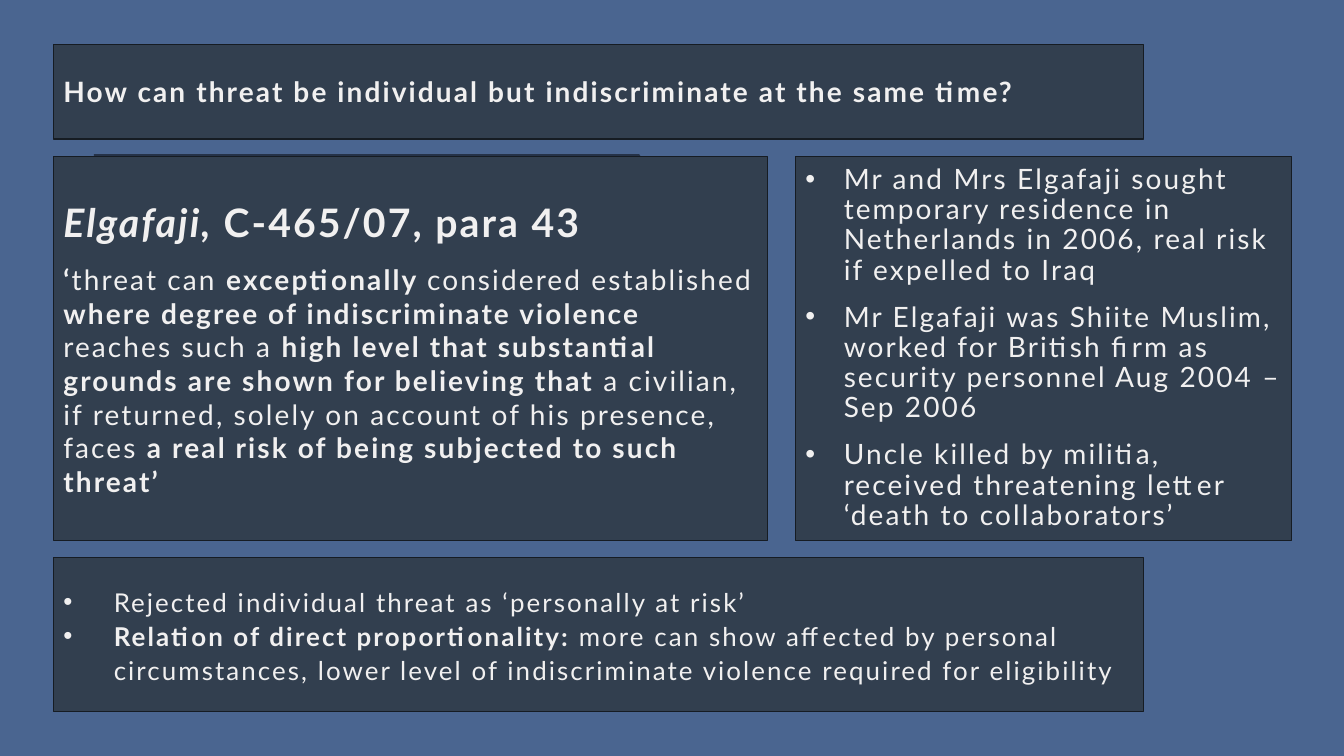
import pptx
import pptx.dml.color
import pptx.enum.shapes
import pptx.enum.text
import pptx.util
from lxml import etree
from pptx.util import Inches

RGBColor = pptx.dml.color.RGBColor
BACKGROUND = RGBColor(0x4A, 0x65, 0x90)
BACKDROP = RGBColor(0x25, 0x32, 0x48)
PANEL = RGBColor(0x32, 0x3F, 0x4F)
BORDER = RGBColor(0x16, 0x1C, 0x23)
TEXT = RGBColor(0xF1, 0xF0, 0xF0)

LEFT = 0.53
WIDE = 10.81
MIDDLE_TOP, MIDDLE_HEIGHT = 1.55, 3.81


def add_backdrop(slide):
    """Cut-corner outline behind the quotation panel."""
    points = [(6.34, 1.53), (7.08, 2.59), (7.08, 4.68), (0.93, 4.68)]
    builder = slide.shapes.build_freeform(Inches(0.93), Inches(1.53))
    builder.add_line_segments([(Inches(x), Inches(y)) for x, y in points], close=True)
    sp = builder.convert_to_shape()
    sp.shadow.inherit = False
    sp.fill.solid()
    sp.fill.fore_color.rgb = BACKDROP
    sp.line.fill.background()


def add_panel(slide, left, top, width, height):
    """Bordered dark rectangle; returns its text frame."""
    sp = slide.shapes.add_shape(
        pptx.enum.shapes.MSO_SHAPE.RECTANGLE,
        Inches(left), Inches(top), Inches(width), Inches(height))
    sp.shadow.inherit = False
    sp.fill.solid()
    sp.fill.fore_color.rgb = PANEL
    sp.line.color.rgb = BORDER
    sp.line.width = pptx.util.Pt(1)
    tf = sp.text_frame
    tf.word_wrap = True
    tf.vertical_anchor = pptx.enum.text.MSO_ANCHOR.MIDDLE
    return tf


def add_paragraph(tf, runs, size, before=0, line_spacing=1.0, indent=0):
    """Add (text, style) runs, style holding b and i; an indent adds a bullet."""
    p = tf.paragraphs[0]
    if p.runs:
        p = tf.add_paragraph()
    p.alignment = pptx.enum.text.PP_ALIGN.LEFT
    p.space_before = pptx.util.Pt(before)
    p.line_spacing = line_spacing
    p.font.name = "Lato"
    p.font.size = pptx.util.Pt(size)
    p.font.color.rgb = TEXT
    if indent:
        add_bullet(p, indent)
    for text, style in runs:
        r = p.add_run()
        r.text = text
        r.font.bold = "b" in style
        r.font.italic = "i" in style
        r.font._element.set("spc", "150")


def add_bullet(p, indent):
    pPr = p._p.get_or_add_pPr()
    pPr.set("marL", str(Inches(indent)))
    pPr.set("indent", str(-Inches(indent)))
    ns = pptx.oxml.ns.qn
    bullet_font = etree.Element(ns("a:buFont"), typeface="Arial")
    bullet = etree.Element(ns("a:buChar"), char="•")
    defaults = pPr.find(ns("a:defRPr"))
    defaults.addprevious(bullet_font)
    defaults.addprevious(bullet)


def main():
    prs = pptx.Presentation()
    prs.slide_width, prs.slide_height = Inches(13.33), Inches(7.5)
    slide = prs.slides.add_slide(prs.slide_layouts[6])
    slide.background.fill.solid()
    slide.background.fill.fore_color.rgb = BACKGROUND
    add_backdrop(slide)

    # Quotation from the judgment
    tf = add_panel(slide, LEFT, MIDDLE_TOP, 7.08, MIDDLE_HEIGHT)
    add_paragraph(tf, [("Elgafaji, ", "bi"), ("C-465/07, para 43", "b")], 28, before=12)
    add_paragraph(tf, [
        ("‘", "b"),
        ("threat can ", ""),
        ("exceptionally ", "b"),
        ("considered established ", ""),
        ("where degree of indiscriminate violence ", "b"),
        ("reaches such a ", ""),
        ("high level that substantial grounds are shown for believing that ", "b"),
        ("a civilian, if returned, solely on account of his presence, faces ", ""),
        ("a real risk of being subjected to such threat’", "b"),
    ], 20, before=12)

    # Title
    tf = add_panel(slide, LEFT, 0.44, WIDE, 0.94)
    add_paragraph(tf, [
        ("How can threat be individual but indiscriminate at the same time?", "b")], 20)

    # Conclusion
    tf = add_panel(slide, LEFT, 5.53, WIDE, 1.53)
    for runs in (
        [("Rejected individual threat as ‘personally at risk’", "")],
        [("Relation of direct proportionality: ", "b"),
         ("more can show affected by personal circumstances, lower level of "
          "indiscriminate violence required for eligibility", "")],
    ):
        add_paragraph(tf, runs, 18.5, line_spacing=1.1, indent=0.5)

    # Facts of the case
    tf = add_panel(slide, 7.89, MIDDLE_TOP, 4.92, MIDDLE_HEIGHT)
    for fact in (
        "Mr and Mrs Elgafaji sought temporary residence in Netherlands in 2006, "
        "real risk if expelled to Iraq",
        "Mr Elgafaji was Shiite Muslim, worked for British firm as security "
        "personnel Aug 2004 – Sep 2006",
        "Uncle killed by militia, received threatening letter "
        "‘death to collaborators’",
    ):
        add_paragraph(tf, [(fact, "")], 20, before=12, line_spacing=0.9, indent=0.38)

    prs.save("out.pptx")


if __name__ == "__main__":
    main()
